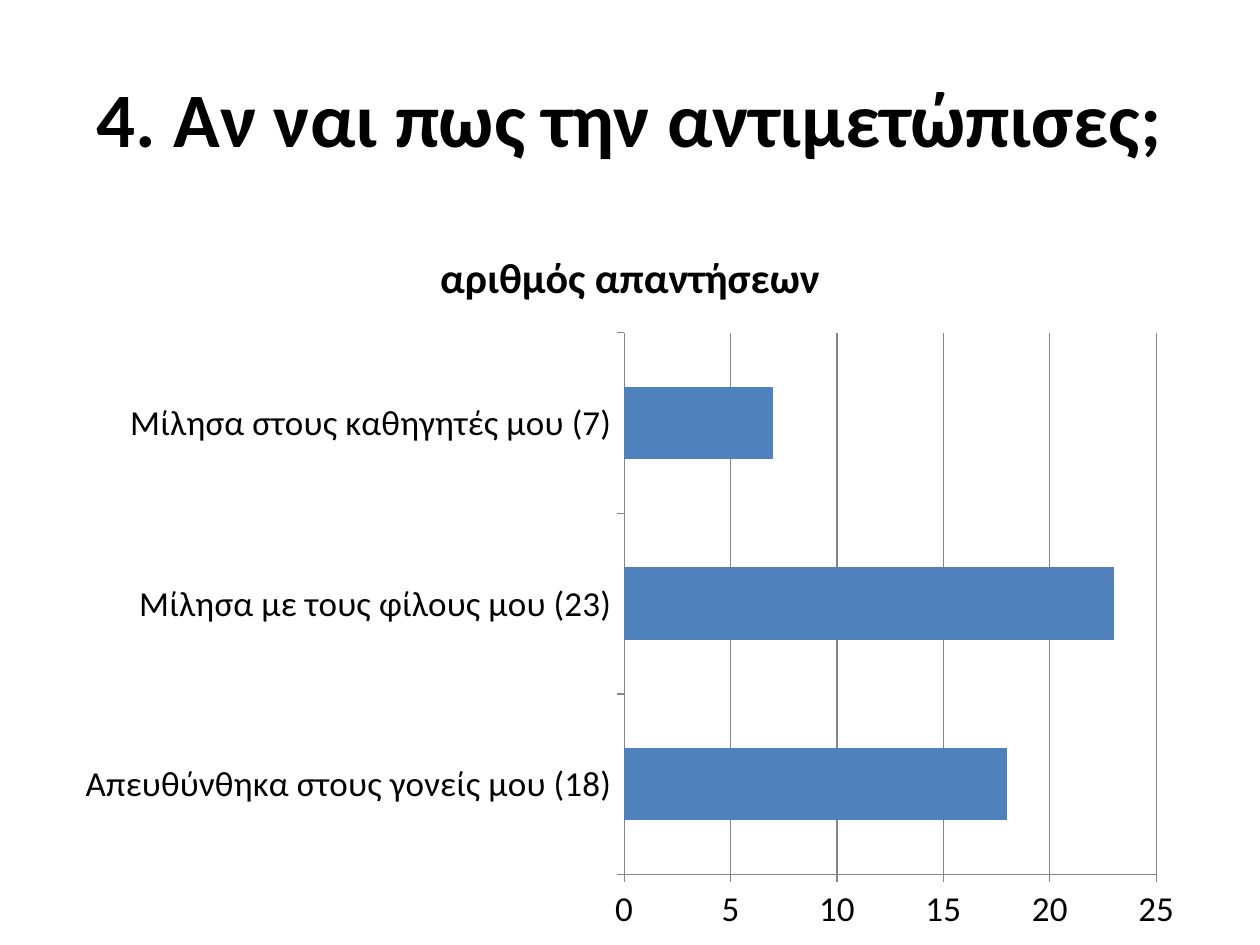
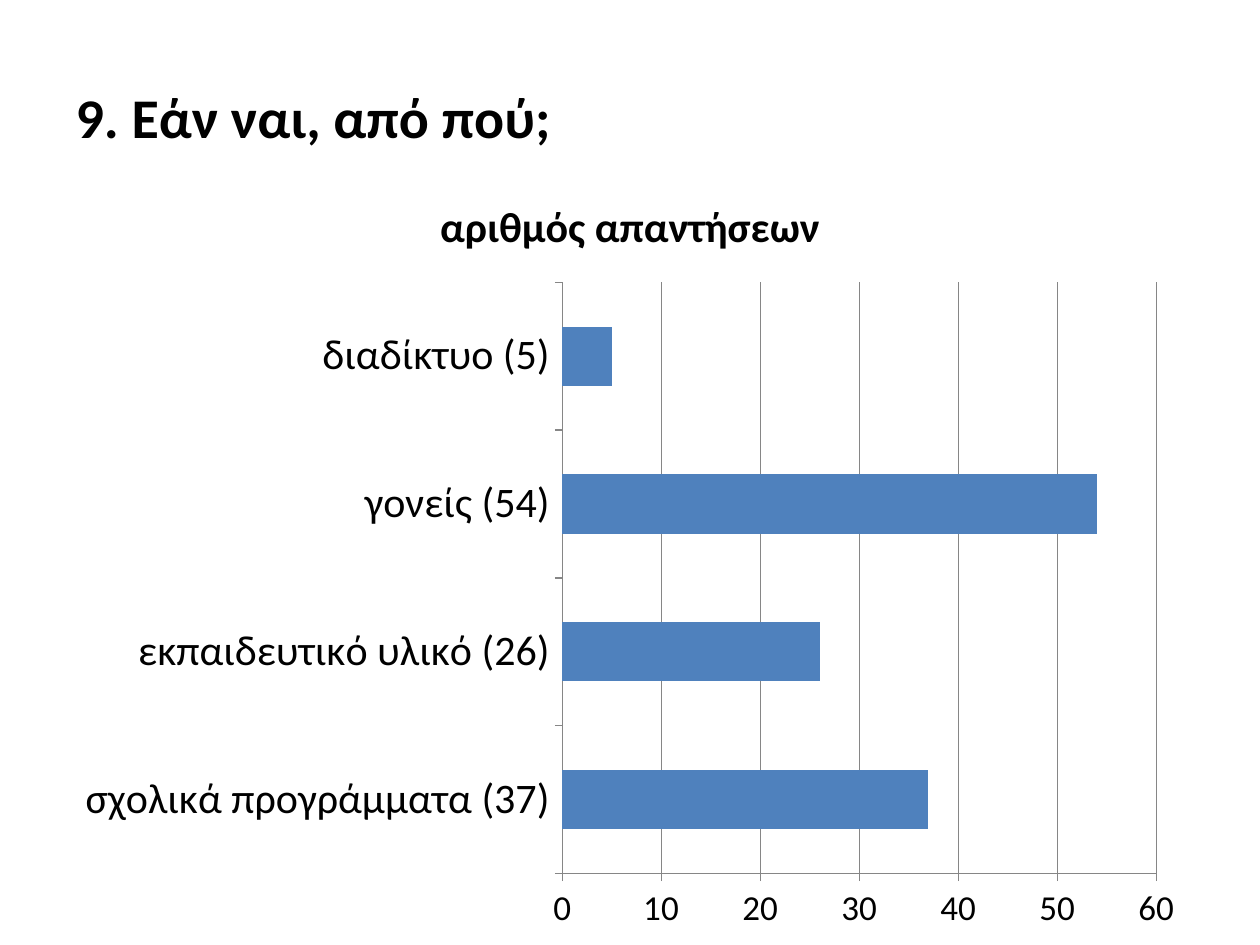
import pptx
import pptx.chart.data
import pptx.dml.color
import pptx.enum.chart
import pptx.enum.text
import pptx.util

Pt = pptx.util.Pt
BLACK = pptx.dml.color.RGBColor(0x00, 0x00, 0x00)
BLUE = pptx.dml.color.RGBColor(0x4F, 0x81, 0xBD)
GRAY = pptx.dml.color.RGBColor(0x86, 0x86, 0x86)
FONT = "Calibri"
LEFT, WIDTH = 36, 648
SLIDE_WIDTH, SLIDE_HEIGHT = 720, 540
SERIES_NAME = "αριθμός απαντήσεων"


class SurveyDeck:
    """Builds survey slides that share one title and bar chart style."""

    def __init__(self):
        self.presentation = pptx.Presentation()
        self.presentation.slide_width = Pt(SLIDE_WIDTH)
        self.presentation.slide_height = Pt(SLIDE_HEIGHT)
        self.slide = None

    def add_slide(self):
        layout = self.presentation.slide_layouts.get_by_name("Title Only")
        self.slide = self.presentation.slides.add_slide(layout)

    def style_font(self, font, size, bold=False):
        font.name = FONT
        font.size = Pt(size)
        font.bold = bold
        font.color.rgb = BLACK

    def add_title(self, text, size, alignment):
        title = self.slide.shapes.title
        title.left, title.top = Pt(LEFT), Pt(21.6)
        title.width, title.height = Pt(WIDTH), Pt(90)
        frame = title.text_frame
        frame.text = text
        frame.word_wrap = True
        frame.auto_size = pptx.enum.text.MSO_AUTO_SIZE.NONE
        frame.vertical_anchor = pptx.enum.text.MSO_ANCHOR.MIDDLE
        paragraph = frame.paragraphs[0]
        paragraph.alignment = alignment
        self.style_font(paragraph.font, size, bold=True)

    def style_axis(self, axis, size):
        axis.major_tick_mark = pptx.enum.chart.XL_TICK_MARK.OUTSIDE
        axis.minor_tick_mark = pptx.enum.chart.XL_TICK_MARK.NONE
        axis.format.line.color.rgb = GRAY
        axis.format.line.width = Pt(0.75)
        self.style_font(axis.tick_labels.font, size)

    def add_bar_chart(self, top, answers, label_size, maximum, step):
        data = pptx.chart.data.CategoryChartData()
        data.categories = [f"{answer} ({count})" for answer, count in answers]
        data.add_series(SERIES_NAME, [count for _, count in answers])
        chart = self.slide.shapes.add_chart(
            pptx.enum.chart.XL_CHART_TYPE.BAR_CLUSTERED,
            Pt(LEFT), Pt(top), Pt(WIDTH), Pt(SLIDE_HEIGHT - top), data,
        ).chart
        self.style_font(chart.font, 10)
        chart.has_legend = False
        chart.has_title = True
        title_frame = chart.chart_title.text_frame
        title_frame.text = SERIES_NAME
        self.style_font(title_frame.paragraphs[0].font, 24, bold=True)
        chart.chart_title.include_in_layout = False

        plot = chart.plots[0]
        plot.gap_width = 150
        plot.vary_by_categories = False
        fill = plot.series[0].format.fill
        fill.solid()
        fill.fore_color.rgb = BLUE

        self.style_axis(chart.category_axis, label_size)
        value_axis = chart.value_axis
        self.style_axis(value_axis, 20)
        value_axis.minimum_scale = 0
        value_axis.maximum_scale = maximum
        value_axis.major_unit = step
        value_axis.has_major_gridlines = True
        gridline = value_axis.major_gridlines.format.line
        gridline.color.rgb = GRAY
        gridline.width = Pt(0.75)


def main():
    deck = SurveyDeck()

    deck.add_slide()
    deck.add_title("4. Αν ναι πως την αντιμετώπισες;", 44,
                   pptx.enum.text.PP_ALIGN.CENTER)
    deck.add_bar_chart(126, [
        ("Απευθύνθηκα στους γονείς μου", 18),
        ("Μίλησα με τους φίλους μου", 23),
        ("Μίλησα στους καθηγητές μου", 7),
    ], label_size=20, maximum=25, step=5)

    deck.add_slide()
    deck.add_title("9. Εάν ναι, από πού;", 32,
                   pptx.enum.text.PP_ALIGN.LEFT)
    deck.add_bar_chart(96, [
        ("σχολικά προγράμματα", 37),
        ("εκπαιδευτικό υλικό", 26),
        ("γονείς", 54),
        ("διαδίκτυο", 5),
    ], label_size=24, maximum=60, step=10)

    deck.presentation.save("out.pptx")


if __name__ == "__main__":
    main()
